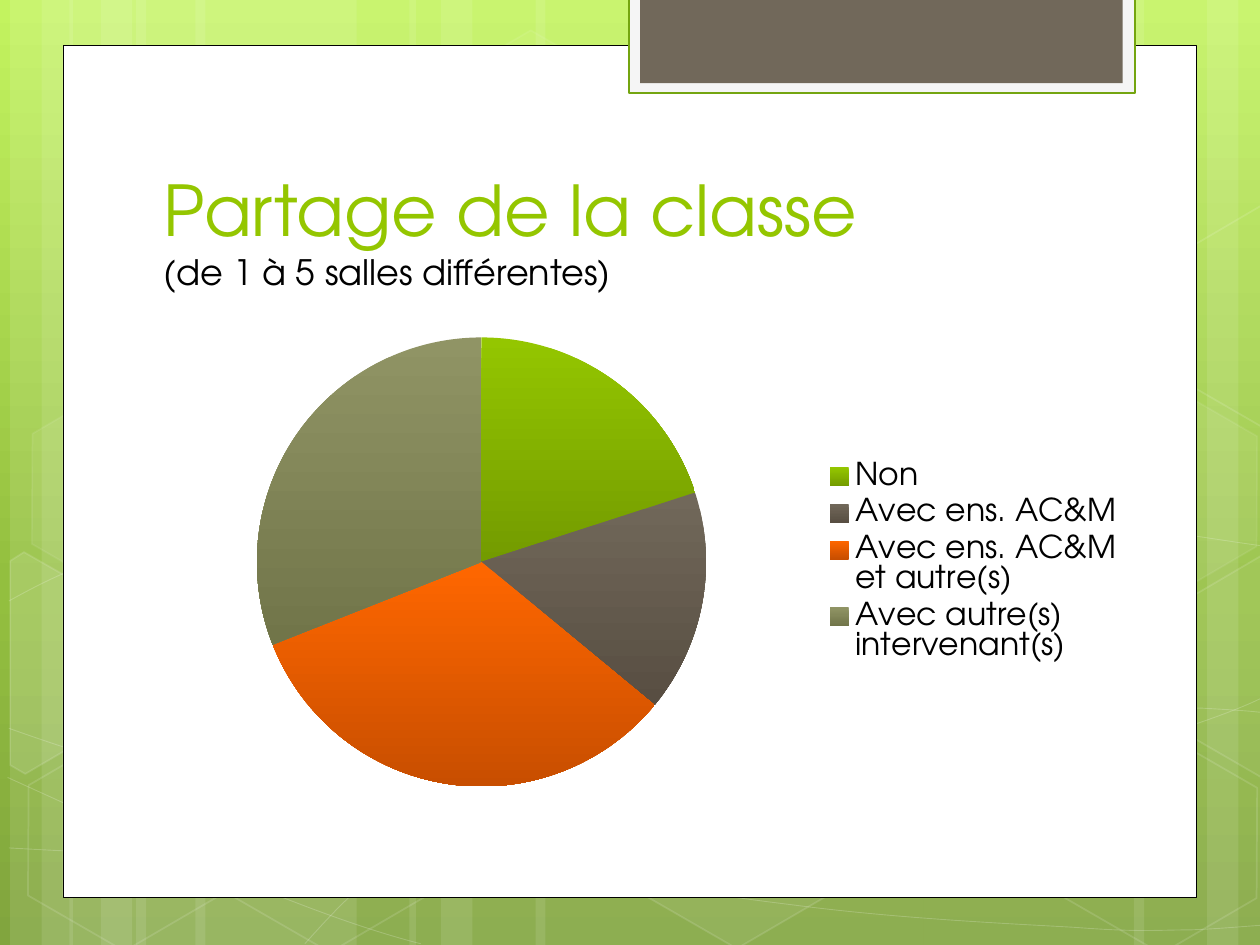
from copy import deepcopy
from math import cos, radians, sin

from pptx import Presentation
from pptx.chart.data import CategoryChartData
from pptx.dml.color import RGBColor
from pptx.enum.chart import XL_CHART_TYPE, XL_LEGEND_POSITION
from pptx.enum.shapes import MSO_SHAPE as SHAPE
from pptx.enum.text import MSO_ANCHOR, MSO_AUTO_SIZE, PP_ALIGN
from pptx.oxml.ns import qn
from pptx.util import Inches, Pt

FONT = "TeX Gyre Adventor"
WHITE = RGBColor(0xFF, 0xFF, 0xFF)
BLACK = RGBColor(0, 0, 0)
GREEN = RGBColor(0x94, 0xC6, 0x00)
TAUPE = RGBColor(0x71, 0x68, 0x5A)
TAB_FILL = RGBColor(0xF5, 0xF5, 0xF5)
TAB_LINE = RGBColor(0x74, 0xA5, 0x10)
BG_STOPS = [(0, RGBColor(0xC3, 0xF3, 0x5F)), (0.62, RGBColor(0x93, 0xBF, 0x3F)),
            (1, RGBColor(0x81, 0xA5, 0x3E))]
TILT = 30  # degrees every hexagon is turned

# Category, value, gradient top and bottom colours
SLICES = [
    ("Non", 20, GREEN, RGBColor(0x73, 0x9B, 0x00)),
    ("Avec ens. AC&M", 16, TAUPE, RGBColor(0x58, 0x4E, 0x42)),
    ("Avec ens. AC&M et autre(s)", 33, RGBColor(0xFF, 0x67, 0x00), RGBColor(0xC8, 0x4E, 0x00)),
    ("Avec autre(s) intervenant(s)", 31, RGBColor(0x90, 0x94, 0x65), RGBColor(0x71, 0x75, 0x49)),
]

# Left and width of the full-height translucent bars
BARS = [(1.08, 1.75), (0.08, 0.5), (0.33, 0.83), (1.55, 1.75), (0.55, 0.5), (0.8, 0.83),
        (7.33, 1.75), (9.58, 0.5), (9, 0.83), (4.25, 3.08), (3.25, 0.5), (3.5, 0.83)]

# Each curve: a start point, then Bezier segments of three points
CURVES = [
    [(0.07, 6.73), (0.61, 6.76), (1.15, 6.79), (1.9, 6.78), (2.65, 6.77), (3.58, 6.75),
     (4.58, 6.65), (5.58, 6.55), (7, 6.36), (7.92, 6.17), (8.83, 5.98), (9.77, 5.68),
     (10.07, 5.51)],
    [(0.07, 4.77), (0.36, 4.61), (0.65, 4.46), (1.21, 4.31), (1.78, 4.16), (2.59, 3.94),
     (3.47, 3.87), (4.36, 3.8), (5.44, 3.79), (6.54, 3.87), (7.64, 3.95), (9.47, 4.26),
     (10.07, 4.34)],
    [(0.06, 6.17), (1.27, 6.72), (2.47, 7.27), (3.34, 7.49)],
    [(0.07, 5.78), (0.38, 5.89), (0.7, 6), (1.28, 6.16), (1.86, 6.31), (2.73, 6.56),
     (3.57, 6.73), (4.4, 6.9), (5.45, 7.08), (6.28, 7.18), (7.11, 7.29), (8, 7.33),
     (8.53, 7.36), (9.05, 7.4), (9.19, 7.38), (9.45, 7.38), (9.71, 7.37), (9.89, 7.35),
     (10.07, 7.34)],
    [(2.42, 7.49), (2.6, 7.29), (2.78, 7.09), (3.02, 6.91), (3.26, 6.73), (3.6, 6.53),
     (3.88, 6.39), (4.16, 6.25), (4.33, 6.19), (4.7, 6.09), (5.06, 5.99), (5.73, 5.85),
     (6.08, 5.78), (6.44, 5.71), (6.49, 5.71), (6.8, 5.69), (7.11, 5.66), (7.6, 5.63),
     (7.94, 5.62), (8.29, 5.61), (8.86, 5.62), (8.86, 5.62), (8.86, 5.62), (9.53, 5.62),
     (9.53, 5.62), (9.71, 5.63), (9.88, 5.64), (9.97, 5.65), (10.06, 5.66), (10.03, 5.65),
     (10.06, 5.66)],
]

# Left, top, fill opacity (None for no fill), line opacity
HEXAGONS = [(3.34, 0.36, 4, 8), (4.97, 5.89, 6, 12), (0.11, 5.91, None, 12),
            (0.14, 3.12, 7, 8), (1.74, 5.92, None, 12), (8.34, 5.93, None, 12),
            (8.34, 3.14, 7, 8)]

# Hexagons cut off by the slide edge: fill opacity, centre, corners
CUT_HEXAGONS = [
    (10, (0.36, 5.35), [(0.08, 4.45), (0.19, 4.38), (0.96, 4.82), (0.95, 5.7), (0.2, 6.14),
                        (0.08, 6.07)]),
    (4, (9.85, 5.2), [(9.26, 4.85), (10.01, 4.41), (10.09, 4.46), (10.09, 6.13),
                      (10.02, 6.17), (9.26, 5.73)]),
    (None, (9.85, 2.41), [(9.26, 2.07), (10.01, 1.63), (10.1, 1.68), (10.09, 3.35),
                          (10.02, 3.39), (9.26, 2.95)]),
]


def set_gradient(fill, stops):
    """Fill from top to bottom with (position, colour) stops."""
    for stop, (position, color) in zip(fill.gradient_stops, stops):
        stop.position = position
        stop.color.rgb = color
    fill.gradient_angle = 270


def fade(sp, xpath, percent):
    for clr in sp.element.spPr.xpath(xpath):
        clr.append(clr.makeelement(qn("a:alpha"), {"val": str(percent * 1000)}))


def style(sp, fill=None, line=None, width=1, fill_opacity=None, line_opacity=None):
    sp.shadow.inherit = False
    if fill is None:
        sp.fill.background()
    else:
        sp.fill.solid()
        sp.fill.fore_color.rgb = fill
        if fill_opacity:
            fade(sp, "./a:solidFill/a:srgbClr", fill_opacity)
    if line is None:
        sp.line.fill.background()
    else:
        sp.line.color.rgb = line
        sp.line.width = Pt(width)
        if line_opacity:
            fade(sp, "./a:ln/a:solidFill/a:srgbClr", line_opacity)


def add_box(slide, box, kind=SHAPE.RECTANGLE, **look):
    sp = slide.shapes.add_shape(kind, *map(Inches, box))
    style(sp, **look)
    return sp


def add_outline(slide, points, close, **look):
    points = [(Inches(x), Inches(y)) for x, y in points]
    builder = slide.shapes.build_freeform(*points[0])
    builder.add_line_segments(points[1:], close=close)
    sp = builder.convert_to_shape()
    style(sp, **look)
    return sp


def add_curve(slide, points, **look):
    sp = add_outline(slide, points, False, **look)
    # Join every three line steps into one Bezier segment
    steps = sp.element.spPr.xpath(".//a:lnTo")
    for i in range(0, len(steps), 3):
        bezier = steps[i].makeelement(qn("a:cubicBezTo"))
        steps[i].addprevious(bezier)
        for step in steps[i:i + 3]:
            bezier.append(step[0])
            step.getparent().remove(step)


def turn(point, center, degrees):
    dx, dy = point[0] - center[0], point[1] - center[1]
    c, s = cos(radians(degrees)), sin(radians(degrees))
    return center[0] + dx * c - dy * s, center[1] + dx * s + dy * c


def add_backdrop(slide, height):
    # Gradient background with a third stop
    fill = slide.background.fill
    fill.gradient()
    stop_list = slide.element.xpath(".//p:bg//a:gsLst")[0]
    stop_list.append(deepcopy(stop_list[-1]))
    set_gradient(fill, BG_STOPS)
    # Bars, curves and hexagons
    for left, width in BARS:
        add_box(slide, (left, 0, width, height), fill=WHITE, fill_opacity=10)
    for curve in CURVES:
        add_curve(slide, curve, line=WHITE, width=0.5, line_opacity=20)
    for left, top, opacity, line_opacity in HEXAGONS:
        sp = add_box(slide, (left, top, 1.75, 1.52), SHAPE.HEXAGON, fill=WHITE if opacity else None,
                     fill_opacity=opacity, line=WHITE, line_opacity=line_opacity)
        sp.adjustments[0] = 0.285
        sp.rotation = TILT
    for opacity, center, corners in CUT_HEXAGONS:
        level = [turn(corner, center, -TILT) for corner in corners]
        sp = add_outline(slide, level, True, fill=WHITE if opacity else None,
                         fill_opacity=opacity, line=WHITE, line_opacity=12)
        sp.rotation = TILT


def add_panel(slide, box):
    left, _, width, _ = box
    add_box(slide, box, fill=WHITE, line=BLACK, width=0.5)
    # Tab hanging from the top edge
    tab_left = left + width - 4.51
    add_box(slide, (tab_left, -0.02, 4.02, 0.76), fill=TAB_FILL, line=TAB_LINE, width=1.25)
    add_box(slide, (tab_left + 0.09, -0.02, 3.83, 0.68), fill=TAUPE)


def add_title(slide, box):
    title = slide.shapes.title
    slide.shapes.element.append(title.element)  # bring to front
    title.left, title.top, title.width, title.height = map(Inches, box)
    tf = title.text_frame
    tf.text = "Partage de la classe\v(de 1 à 5 salles différentes)"
    tf.word_wrap = True
    tf.auto_size = MSO_AUTO_SIZE.NONE
    tf.vertical_anchor = MSO_ANCHOR.BOTTOM
    p = tf.paragraphs[0]
    p.alignment = PP_ALIGN.LEFT
    for r, size, color in zip(p.runs, (40, 20), (GREEN, BLACK)):
        r.font.name, r.font.size, r.font.color.rgb = FONT, Pt(size), color


def add_pie(slide, box):
    data = CategoryChartData()
    data.categories = [name for name, *_ in SLICES]
    data.add_series("Series 1", [value for _, value, *_ in SLICES])
    chart = slide.shapes.add_chart(XL_CHART_TYPE.PIE, *map(Inches, box), data).chart
    chart.has_title = False
    chart.font.name, chart.font.size, chart.font.color.rgb = FONT, Pt(18), BLACK
    chart.has_legend = True
    chart.legend.position = XL_LEGEND_POSITION.RIGHT
    chart.legend.include_in_layout = False
    plot = chart.plots[0]
    plot.vary_by_categories = True
    for i, (_, _, top_color, bottom_color) in enumerate(SLICES):
        fmt = plot.series[0].points[i].format
        fmt.fill.gradient()
        set_gradient(fmt.fill, [(0, top_color), (1, bottom_color)])
        fmt.line.fill.background()


def main():
    prs = Presentation()
    prs.slide_width, prs.slide_height = Inches(10), Inches(7.5)
    slide = prs.slides.add_slide(prs.slide_layouts[5])
    add_backdrop(slide, 7.5)
    add_panel(slide, (0.5, 0.36, 9, 6.76))
    add_title(slide, (1.2, 1.12, 7.68, 1.25))
    add_pie(slide, (1.14, 2.54, 7.89, 3.84))
    prs.save("out.pptx")


if __name__ == "__main__":
    main()
